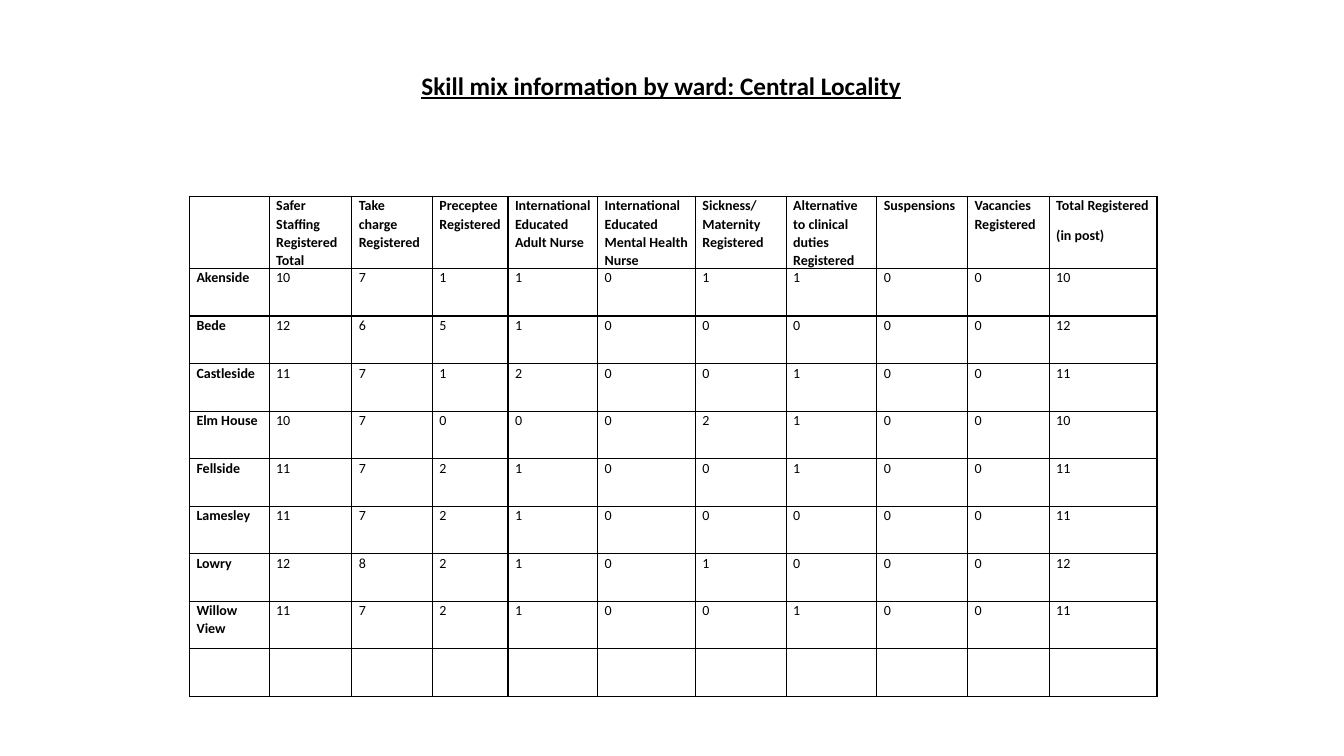
from dataclasses import dataclass

from lxml import etree
from pptx import Presentation
from pptx import util as u
from pptx.dml.color import RGBColor
from pptx.enum import text
from pptx.oxml import ns


@dataclass(frozen=True)
class Theme:
    font: str = "Calibri"
    ink: str = "000000"
    title_size: int = 18
    table_size: int = 10
    border: float = 1


class WardSlide:
    """Places elements by percentages of the slide's size."""

    def __init__(self, deck, theme):
        self.deck, self.theme = deck, theme
        self.page = deck.slides.add_slide(deck.slide_layouts[6])

    def frame(self, left, top, width, height):
        wide, high = self.deck.slide_width, self.deck.slide_height
        shares = ((left, wide), (top, high), (width, wide), (height, high))
        return [round(share * side / 100) for share, side in shares]

    def style(self, para, size, bold, spacing):
        font = para.font
        font.name, font.size, font.bold = self.theme.font, u.Pt(size), bold
        font.color.rgb = RGBColor.from_string(self.theme.ink)
        para.line_spacing = spacing

    def title(self, words, *place):
        box = self.page.shapes.add_textbox(*self.frame(*place)).text_frame
        box.word_wrap = True
        box.vertical_anchor = text.MSO_ANCHOR.TOP
        box.margin_top = u.Inches(0.23)
        para = box.paragraphs[0]
        para.text = words
        para.alignment = text.PP_ALIGN.CENTER
        self.style(para, self.theme.title_size, True, 0.9)
        para.font.underline = True

    def outline(self, cell):
        properties = cell._tc.get_or_add_tcPr()
        for side in ("lnL", "lnR", "lnT", "lnB"):
            line = etree.SubElement(properties, ns.qn(f"a:{side}"),
                                    w=str(u.Pt(self.theme.border)))
            fill = etree.SubElement(line, ns.qn("a:solidFill"))
            etree.SubElement(fill, ns.qn("a:srgbClr"), val=self.theme.ink)

    def cell(self, cell, words, bold):
        self.outline(cell)
        cell.fill.background()
        cell.margin_left = cell.margin_right = u.Inches(0.07)
        cell.margin_top = cell.margin_bottom = 0
        cell.text_frame.text = words
        for para in cell.text_frame.paragraphs:
            self.style(para, self.theme.table_size, bold, 1.07)
            para.space_after = u.Pt(8)

    def table(self, rows, widths, heights, *place):
        left, top, width, height = self.frame(*place)
        table = self.page.shapes.add_table(
            len(rows), len(widths), left, top, width, height).table
        table.first_row = table.horz_banding = False
        # Shares of the table's full width and height
        for column, share in zip(table.columns, widths):
            column.width = round(width * share / sum(widths))
        for row, share in zip(table.rows, heights):
            row.height = round(height * share / sum(heights))
        for r, values in enumerate(rows):
            for c, value in enumerate(values):
                self.cell(table.cell(r, c), str(value), r == 0 or c == 0)


HEADINGS = [
    "", "Safer Staffing Registered Total", "Take charge Registered",
    "Preceptee Registered", "International Educated Adult Nurse",
    "International Educated Mental Health Nurse",
    "Sickness/ Maternity Registered",
    "Alternative to clinical duties Registered",
    "Suspensions", "Vacancies Registered", "Total Registered\n(in post)",
]
WARDS = [
    ["Akenside", 10, 7, 1, 1, 0, 1, 1, 0, 0, 10],
    ["Bede", 12, 6, 5, 1, 0, 0, 0, 0, 0, 12],
    ["Castleside", 11, 7, 1, 2, 0, 0, 1, 0, 0, 11],
    ["Elm House", 10, 7, 0, 0, 0, 2, 1, 0, 0, 10],
    ["Fellside", 11, 7, 2, 1, 0, 0, 1, 0, 0, 11],
    ["Lamesley", 11, 7, 2, 1, 0, 0, 0, 0, 0, 11],
    ["Lowry", 12, 8, 2, 1, 0, 1, 0, 0, 0, 12],
    ["Willow View", 11, 7, 2, 1, 0, 0, 1, 0, 0, 11],
]
COLUMN_SHARES = [79, 82, 80, 75, 89, 97, 90, 90, 90, 81, 107]


def main():
    deck = Presentation()
    deck.slide_width, deck.slide_height = u.Inches(13.33), u.Inches(7.5)
    slide = WardSlide(deck, Theme())

    # Title
    slide.title("Skill mix information by ward: Central Locality",
                12.5, 6.67, 73.4, 20.5)

    # Headings, one row per ward and an empty closing row
    rows = [HEADINGS, *WARDS, [""] * len(HEADINGS)]
    heights = [71] + [47] * (len(rows) - 1)
    slide.table(rows, COLUMN_SHARES, heights, 14.1, 26, 72, 66.1)

    deck.save("out.pptx")


if __name__ == "__main__":
    main()
